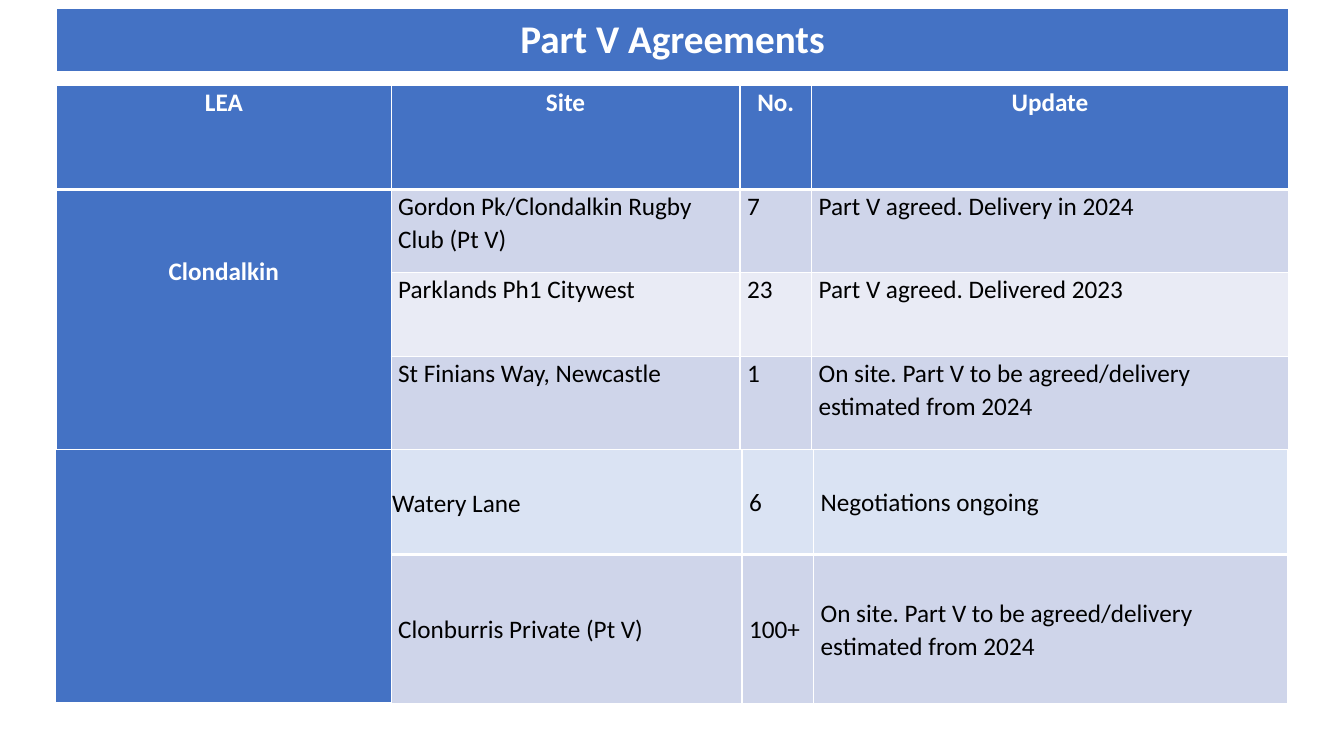
from lxml.etree import SubElement
from pptx import Presentation
from pptx.dml.color import RGBColor
from pptx.enum.text import MSO_ANCHOR, PP_ALIGN
from pptx.oxml.ns import qn
from pptx.util import Inches, Pt

BLUE = RGBColor(0x44, 0x72, 0xC4)
BAND = RGBColor(0xCF, 0xD5, 0xEA)
PALE = RGBColor(0xE9, 0xEB, 0xF5)
SKY = RGBColor(0xDA, 0xE3, 0xF3)
WHITE = RGBColor(0xFF, 0xFF, 0xFF)
BLACK = RGBColor(0, 0, 0)


def edge(cell, top, bottom):
    """Give the cell white borders; top and bottom widths are in points."""
    props = cell._tc.get_or_add_tcPr()
    for side, width in (("L", 1), ("R", 1), ("T", top), ("B", bottom)):
        line = SubElement(props, qn(f"a:ln{side}"), w=str(Pt(width)))
        fill = SubElement(line, qn("a:solidFill"))
        SubElement(fill, qn("a:srgbClr"), val=str(WHITE))


def build(left, top, widths, heights, texts, fills, anchor):
    """Add a table with a thick rule under its first row."""
    frame = slide.shapes.add_table(
        len(heights), len(widths), Inches(left), Inches(top),
        Inches(sum(widths)), Inches(sum(heights)))
    table = frame.table
    table.first_row = table.horz_banding = False
    for col, width in zip(table.columns, widths):
        col.width = Inches(width)
    for row, height in zip(table.rows, heights):
        row.height = Inches(height)

    for r, row in enumerate(texts):
        for c, text in enumerate(row):
            cell = table.cell(r, c)
            head = c == 0 or fills[r] == BLUE
            edge(cell, 3 if r == 1 else 1, 3 if r == 0 else 1)
            cell.fill.solid()
            cell.fill.fore_color.rgb = BLUE if head else fills[r]
            cell.margin_left = cell.margin_right = Inches(0.07)
            cell.margin_top = cell.margin_bottom = 0
            cell.vertical_anchor = anchor
            cell.text = text
            para = cell.text_frame.paragraphs[0]
            para.alignment = PP_ALIGN.CENTER if head else PP_ALIGN.LEFT
            para.line_spacing = 1.07
            para.font.name = "Calibri"
            para.font.size = Pt(18)
            para.font.bold = head
            para.font.color.rgb = WHITE if head else BLACK
    return table


prs = Presentation()
prs.slide_width = Inches(13.33)
prs.slide_height = Inches(7.5)
slide = prs.slides.add_slide(prs.slide_layouts[6])

# Sites with agreements
later = "On site. Part V to be agreed/delivery estimated from 2024"
agreed = build(
    0.56, 0.85, [3.32, 3.46, 0.71, 4.73], [1.03, 0.82, 0.84, 0.92],
    [["LEA", "Site", "No.", "Update"],
     ["Clondalkin", "Gordon Pk/Clondalkin Rugby Club (Pt V)", "7",
      "Part V agreed. Delivery in 2024"],
     ["", "Parklands Ph1 Citywest", "23", "Part V agreed. Delivered 2023"],
     ["", "St Finians Way, Newcastle", "1", later]],
    [BLUE, BAND, PALE, BAND], MSO_ANCHOR.TOP)
area = agreed.cell(1, 0)
area.merge(agreed.cell(3, 0))
area.margin_top = Inches(0.64)

# Title banner
banner = build(0.56, 0.08, [12.22], [0.64], [["Part V Agreements"]],
               [BLUE], MSO_ANCHOR.MIDDLE)
title = banner.cell(0, 0)
title.margin_left = title.margin_right = Inches(0.14)
title.margin_top = title.margin_bottom = Inches(0.07)
para = title.text_frame.paragraphs[0]
para.line_spacing = 1.0
para.font.size = Pt(28)

# Sites still in progress
pending = build(
    0.55, 4.46, [3.33, 3.48, 0.71, 4.7], [1.04, 1.48],
    [["", "Watery Lane", "6", "Negotiations ongoing"],
     ["", "Clonburris Private (Pt V)", "100+", later]],
    [SKY, BAND], MSO_ANCHOR.MIDDLE)
pending.cell(0, 0).merge(pending.cell(1, 0))
lane = pending.cell(0, 1)
lane.margin_left = lane.margin_right = lane.margin_top = Inches(0.01)

prs.save("out.pptx")
